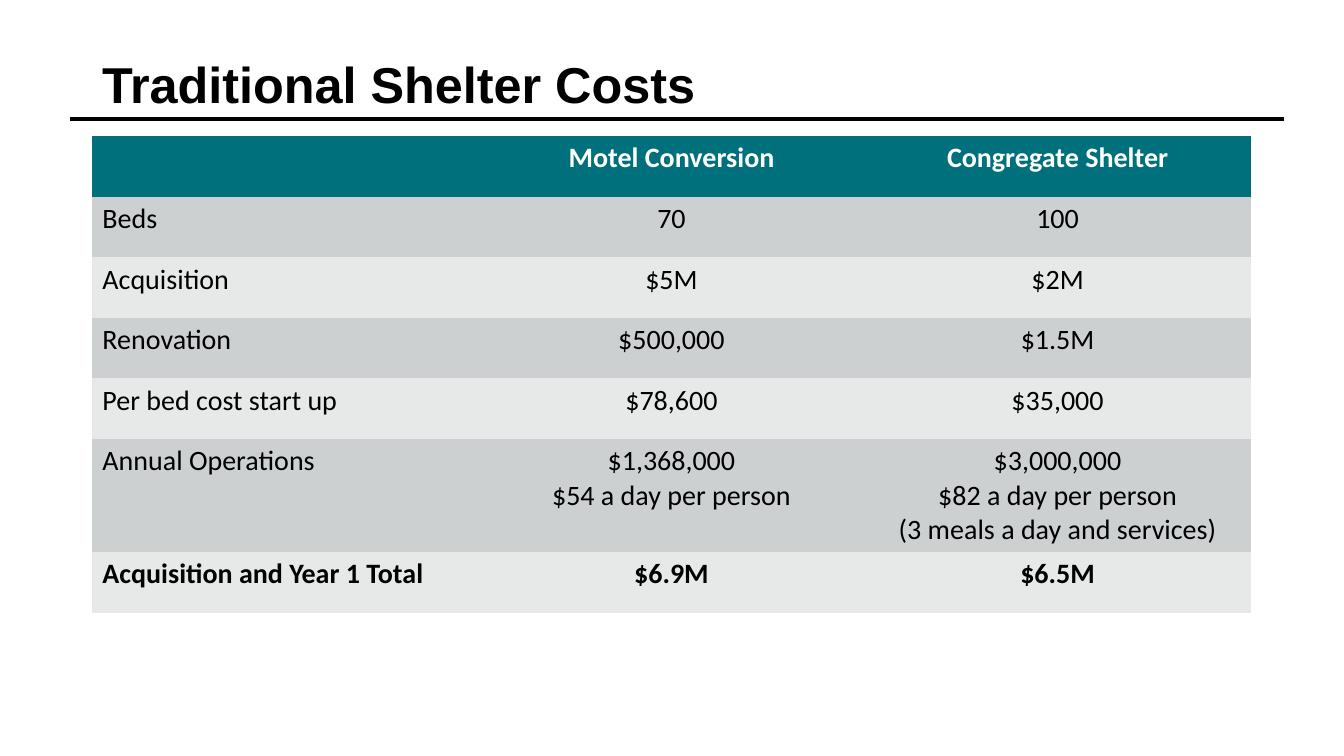
from dataclasses import dataclass

from pptx import Presentation
from pptx.dml.color import RGBColor
from pptx.enum.shapes import MSO_CONNECTOR
from pptx.enum.text import MSO_ANCHOR, MSO_AUTO_SIZE, PP_ALIGN
from pptx.oxml import parse_xml
from pptx.oxml.ns import nsdecls, qn
from pptx.slide import Slide
from pptx.table import _Cell
from pptx.text.text import _Paragraph
from pptx.util import Length, Pt

STRAIGHT = MSO_CONNECTOR.STRAIGHT
BOTTOM = MSO_ANCHOR.BOTTOM
NO_AUTOFIT = MSO_AUTO_SIZE.NONE
LEFT, CENTER = PP_ALIGN.LEFT, PP_ALIGN.CENTER

TITLE_ONLY_LAYOUT = 5
PLAIN_TABLE_STYLE = "{2D5ABB26-0587-4C30-8999-92F81FD0307C}"


@dataclass(frozen=True)
class Theme:
    title_font: str = "Arial"
    table_font: str = "Calibri"
    title_size: Length = Pt(36)
    table_size: Length = Pt(20)
    rule_width: Length = Pt(3)
    ink: RGBColor = RGBColor(0x00, 0x00, 0x00)
    header_ink: RGBColor = RGBColor(0xFF, 0xFF, 0xFF)
    header_fill: RGBColor = RGBColor(0x00, 0x71, 0x7C)
    bands: tuple[RGBColor, RGBColor] = (
        RGBColor(0xCC, 0xD0, 0xD1),
        RGBColor(0xE7, 0xE9, 0xE9),
    )


@dataclass(frozen=True)
class CostRow:
    label: str
    motel: tuple[str, ...]
    congregate: tuple[str, ...]
    height: Length = Pt(43.3)
    bold: bool = False


THEME = Theme()
COLUMN_WIDTH = Pt(275.8)
COST_ROWS = (
    CostRow("", ("Motel Conversion",), ("Congregate Shelter",), bold=True),
    CostRow("Beds", ("70",), ("100",)),
    CostRow("Acquisition", ("$5M",), ("$2M",)),
    CostRow("Renovation", ("$500,000",), ("$1.5M",)),
    CostRow("Per bed cost start up", ("$78,600",), ("$35,000",)),
    CostRow(
        "Annual Operations",
        ("$1,368,000", "$54 a day per person"),
        ("$3,000,000", "$82 a day per person", "(3 meals a day and services)"),
        height=Pt(80.4),
    ),
    CostRow("Acquisition and Year 1 Total", ("$6.9M",), ("$6.5M",), bold=True),
)


def add_run(paragraph: _Paragraph, text: str, font_name: str, size: Length,
            color: RGBColor, bold: bool) -> None:
    run = paragraph.add_run()
    run.text = text
    run.font.name = font_name
    run.font.size = size
    run.font.bold = bold
    run.font.color.rgb = color


def add_heading_rule(slide: Slide) -> None:
    rule = slide.shapes.add_connector(STRAIGHT, Pt(917.3), Pt(85), Pt(49.7), Pt(85))
    rule.line.color.rgb = THEME.ink
    rule.line.width = THEME.rule_width
    rule._element.spPr.append(parse_xml(f"<a:effectLst {nsdecls('a')}/>"))


def fill_title(slide: Slide, text: str) -> None:
    title = slide.shapes.title
    title.left, title.top = Pt(65.7), Pt(38.9)
    title.width, title.height = Pt(828), Pt(46.8)
    frame = title.text_frame
    frame.auto_size = NO_AUTOFIT
    frame.word_wrap = True
    frame.vertical_anchor = BOTTOM
    paragraph = frame.paragraphs[0]
    paragraph.alignment = LEFT
    paragraph.line_spacing = 0.9
    add_run(paragraph, text, THEME.title_font, THEME.title_size, THEME.ink, True)


def fill_cell(cell: _Cell, lines: tuple[str, ...], alignment: PP_ALIGN,
              fill: RGBColor, ink: RGBColor, bold: bool) -> None:
    cell.fill.solid()
    cell.fill.fore_color.rgb = fill
    frame = cell.text_frame
    for index, line in enumerate(lines):
        paragraph = frame.add_paragraph() if index else frame.paragraphs[0]
        paragraph.alignment = alignment
        if line:
            add_run(paragraph, line, THEME.table_font, THEME.table_size, ink, bold)


def add_cost_table(slide: Slide, cost_rows: tuple[CostRow, ...]) -> None:
    total_height = sum(row.height for row in cost_rows)
    table = slide.shapes.add_table(
        len(cost_rows), 3, Pt(66), Pt(97.2), 3 * COLUMN_WIDTH, total_height
    ).table
    table.horz_banding = False
    table._tbl.tblPr.find(qn("a:tableStyleId")).text = PLAIN_TABLE_STYLE
    for column in table.columns:
        column.width = COLUMN_WIDTH
    for index, row in enumerate(cost_rows):
        table.rows[index].height = row.height
        is_header = index == 0
        fill = THEME.header_fill if is_header else THEME.bands[(index - 1) % 2]
        ink = THEME.header_ink if is_header else THEME.ink
        for column_index, lines in enumerate(((row.label,), row.motel, row.congregate)):
            alignment = CENTER if column_index else LEFT
            fill_cell(table.cell(index, column_index), lines, alignment, fill, ink, row.bold)


def main() -> None:
    deck = Presentation()
    deck.slide_width, deck.slide_height = Pt(960), Pt(540)
    slide = deck.slides.add_slide(deck.slide_layouts[TITLE_ONLY_LAYOUT])
    add_heading_rule(slide)
    add_cost_table(slide, COST_ROWS)
    fill_title(slide, "Traditional Shelter Costs")
    deck.save("out.pptx")


if __name__ == "__main__":
    main()
